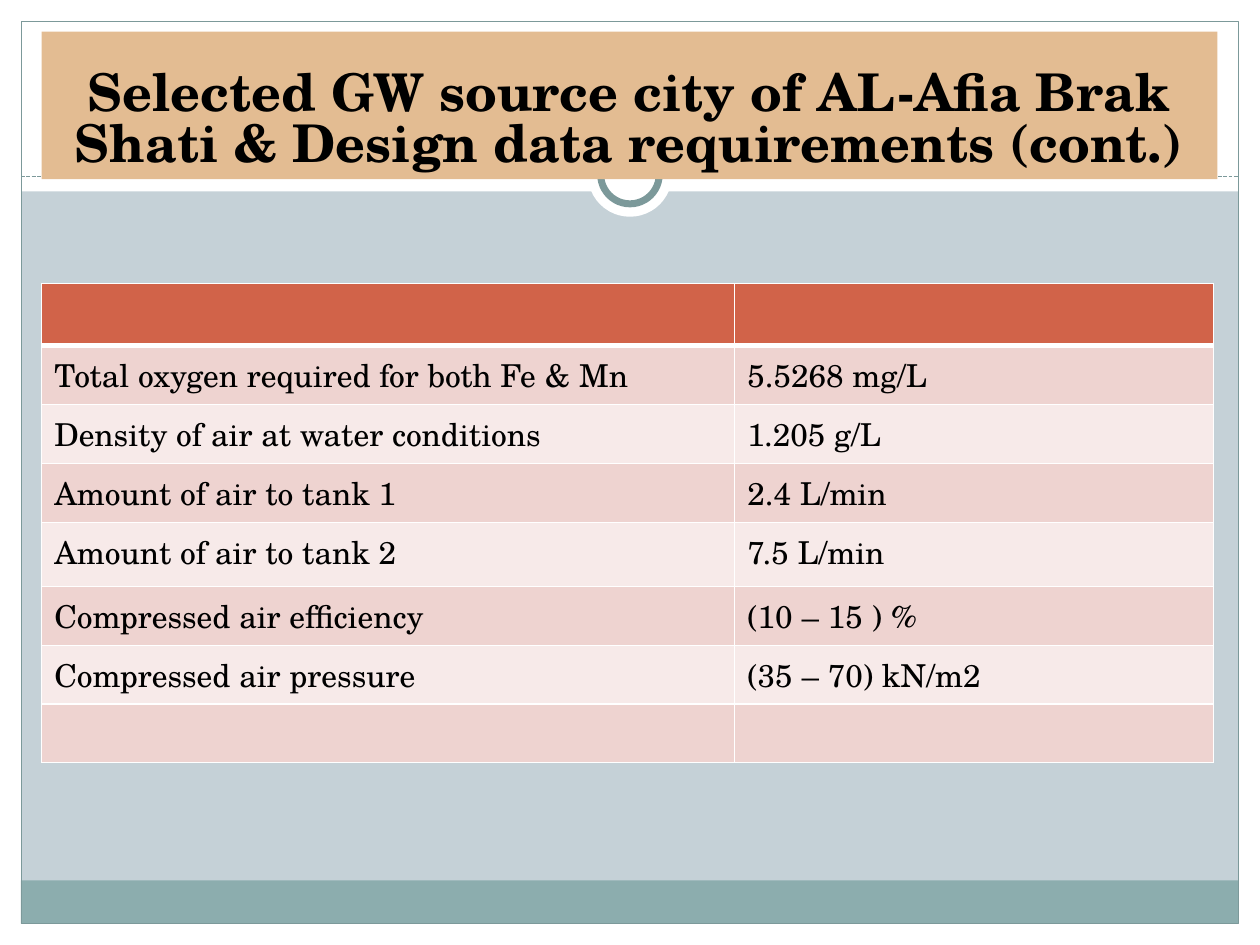
import pptx
import pptx.util
import pptx.dml.color
import pptx.enum.dml
import pptx.enum.shapes
import pptx.enum.text
import pptx.oxml
import pptx.oxml.ns
from pptx.util import Cm, Pt

COLORS = {
    "background": "C5D1D7",
    "white": "FFFFFF",
    "footer": "8CADAE",
    "frame": "7C999A",
    "title": "E3BC92",
    "header": "D16349",
    "odd": "EED3D0",
    "even": "F7EAE9",
    "text": "000000",
}
FONT = "TeX Gyre Schola"
RECTANGLE = pptx.enum.shapes.MSO_SHAPE.RECTANGLE
OVAL = pptx.enum.shapes.MSO_SHAPE.OVAL
DESIGN_DATA = [
    ("", ""),
    ("Total oxygen required for both Fe & Mn", "5.5268 mg/L"),
    ("Density of air at water conditions", "1.205 g/L"),
    ("Amount of air to tank 1", "2.4 L/min"),
    ("Amount of air to tank 2", "7.5 L/min"),
    ("Compressed air efficiency", "(10 – 15 ) %"),
    ("Compressed air pressure", "(35 – 70) kN/m2"),
    ("", ""),
]
ROW_HEIGHTS = [1.25, 1.18, 1.18, 1.18, 1.29, 1.18, 1.18, 1.18]
COLUMN_WIDTHS = [13.97, 9.65]


def rgb(name):
    return pptx.dml.color.RGBColor.from_string(COLORS[name])


def apply_format(target, values):
    for attribute, value in values.items():
        setattr(target, attribute, value)


def paint(fill, color):
    fill.solid()
    fill.fore_color.rgb = rgb(color)


def format_font(font, size, bold=False):
    apply_format(font, {"name": FONT, "size": Pt(size), "bold": bold})
    font.color.rgb = rgb("text")


def add_panel(slide, kind, box, fill=None, line=None, weight=0.75):
    panel = slide.shapes.add_shape(kind, *map(Cm, box))
    panel.shadow.inherit = False
    if fill:
        paint(panel.fill, fill)
    else:
        panel.fill.background()
    if line:
        panel.line.color.rgb = rgb(line)
        panel.line.width = Pt(weight)
    else:
        panel.line.fill.background()


def add_divider(slide, left, right, height):
    divider = slide.shapes.add_connector(
        pptx.enum.shapes.MSO_CONNECTOR.STRAIGHT,
        Cm(left), Cm(height), Cm(right), Cm(height))
    divider.line.color.rgb = rgb("frame")
    apply_format(divider.line, {
        "width": Pt(0.75),
        "dash_style": pptx.enum.dml.MSO_LINE.SQUARE_DOT,
    })
    divider._element.spPr.append(pptx.oxml.parse_xml(
        f"<a:effectLst {pptx.oxml.ns.nsdecls('a')}/>"))


def add_backdrop(slide):
    paint(slide.background.fill, "background")
    margins = [(0, 18.62, 25.4, 0.43), (0, 0, 25.4, 3.86),
               (0, 0, 0.43, 19.05), (24.97, 0, 0.43, 19.05)]
    for margin in margins:
        add_panel(slide, RECTANGLE, margin, "white")
    add_panel(slide, RECTANGLE, (0.42, 17.75, 24.54, 0.87), "footer")
    add_panel(slide, RECTANGLE, (0.43, 0.43, 24.54, 18.19), line="frame")
    add_divider(slide, 0.43, 24.97, 3.56)
    add_panel(slide, OVAL, (11.85, 2.67, 1.7, 1.7), "white")
    add_panel(slide, OVAL, (12.11, 2.93, 1.18, 1.18), "white", "frame", 4)


def add_title(slide, wording):
    title = slide.shapes.title
    slide.shapes._spTree.append(title._element)
    apply_format(title, {"left": Cm(0.84), "top": Cm(0.64),
                         "width": Cm(23.7), "height": Cm(2.97)})
    paint(title.fill, "title")
    apply_format(title.text_frame, {
        "text": wording,
        "word_wrap": True,
        "auto_size": pptx.enum.text.MSO_AUTO_SIZE.NONE,
        "vertical_anchor": pptx.enum.text.MSO_ANCHOR.BOTTOM,
    })
    heading = title.text_frame.paragraphs[0]
    apply_format(heading, {"alignment": pptx.enum.text.PP_ALIGN.CENTER,
                           "line_spacing": 0.82})
    format_font(heading.runs[0].font, 29.7, True)


def add_borders(cell, bottom_weight):
    properties = cell._tc.get_or_add_tcPr()
    weights = {"lnL": 1, "lnR": 1, "lnT": 1, "lnB": bottom_weight}
    for position, (edge, weight) in enumerate(weights.items()):
        properties.insert(position, pptx.oxml.parse_xml(
            f"<a:{edge} {pptx.oxml.ns.nsdecls('a')} w='{Pt(weight)}'>"
            f"<a:solidFill><a:srgbClr val='{COLORS['white']}'/></a:solidFill>"
            f"</a:{edge}>"))


def add_data_table(slide):
    table = slide.shapes.add_table(
        len(DESIGN_DATA), len(COLUMN_WIDTHS), Cm(0.84), Cm(5.72),
        Cm(sum(COLUMN_WIDTHS)), Cm(sum(ROW_HEIGHTS))).table
    for column, width in zip(table.columns, COLUMN_WIDTHS):
        column.width = Cm(width)
    for index, (row, height) in enumerate(zip(table.rows, ROW_HEIGHTS)):
        row.height = Cm(height)
        band = "header" if index == 0 else "odd" if index % 2 else "even"
        for cell, wording in zip(row.cells, DESIGN_DATA[index]):
            paint(cell.fill, band)
            add_borders(cell, 3 if index == 0 else 1)
            if wording:
                cell.text = wording
                format_font(cell.text_frame.paragraphs[0].runs[0].font, 18)


def main():
    deck = pptx.Presentation()
    apply_format(deck, {"slide_width": Cm(25.4), "slide_height": Cm(19.05)})
    slide = deck.slides.add_slide(deck.slide_layouts[5])
    add_backdrop(slide)
    add_title(slide, "Selected GW source city of AL-Afia Brak Shati "
                     "& Design data requirements (cont.)")
    add_data_table(slide)
    deck.save("out.pptx")


if __name__ == "__main__":
    main()
